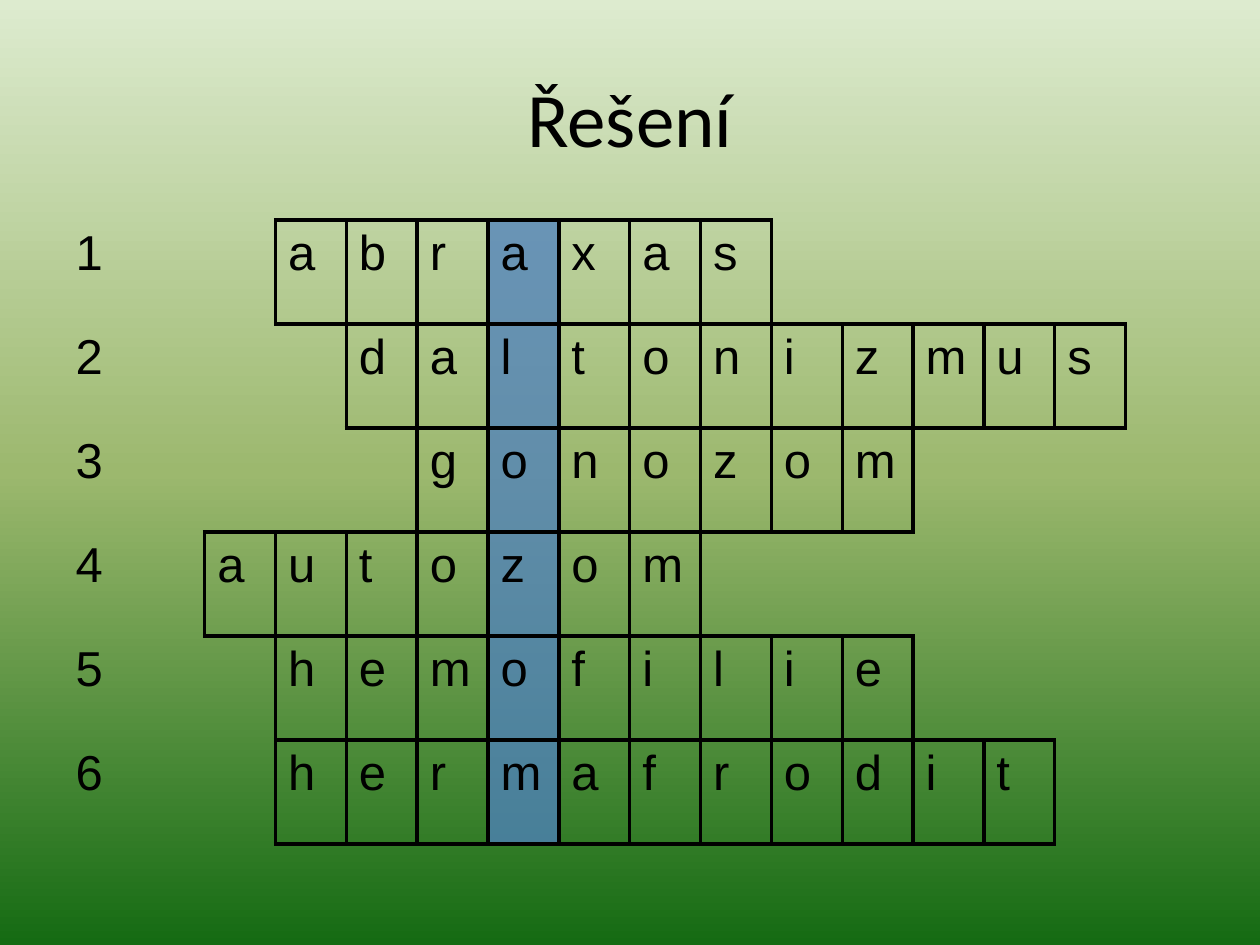
"""Builds the crossword solution slide."""
from lxml import etree
from pptx import Presentation, util as u
from pptx.dml.color import RGBColor
from pptx.enum import text
from pptx.oxml import parse_xml
from pptx.oxml.ns import nsdecls, qn

PX = 914400 / 126
COLORS = {"ink": "000000", "key": "4F81BD", "top": "DDEBCF", "middle": "9CB86E", "bottom": "156B13"}
COLUMNS, KEY_COLUMN = 16, 6
WORDS = [
    (3, "abraxas"),
    (4, "daltonizmus"),
    (5, "gonozom"),
    (2, "autozom"),
    (3, "hemofilie"),
    (3, "hermafrodit"),
]


def px(length):
    return u.Emu(round(length * PX))


def write(frame, words, size, font, align=text.PP_ALIGN.LEFT, anchor=text.MSO_ANCHOR.TOP):
    frame.vertical_anchor = anchor
    paragraph = frame.paragraphs[0]
    paragraph.alignment = align
    run = paragraph.add_run()
    run.text = words
    run.font.size = u.Pt(size)
    run.font.name = font
    run.font.color.rgb = RGBColor.from_string(COLORS["ink"])


deck = Presentation()
deck.slide_width, deck.slide_height = px(1260), px(945)
slide = deck.slides.add_slide(deck.slide_layouts[5])

stops = "".join(
    f'<a:gs pos="{place}"><a:srgbClr val="{COLORS[name]}"/></a:gs>'
    for place, name in ((0, "top"), (50000, "middle"), (100000, "bottom"))
)
slide.background.fill.solid()
solid = slide.background._cSld.find(".//" + qn("a:solidFill"))
solid.getparent().replace(solid, parse_xml(
    f'<a:gradFill {nsdecls("a")} rotWithShape="1"><a:gsLst>{stops}</a:gsLst>'
    '<a:lin ang="5400000" scaled="0"/></a:gradFill>'
))

heading = slide.shapes.title
heading.left, heading.top, heading.width, heading.height = px(63), px(38), px(1134), px(157)
write(heading.text_frame, "Řešení", 44, "Calibri", text.PP_ALIGN.CENTER, text.MSO_ANCHOR.MIDDLE)

crossword = slide.shapes.add_table(len(WORDS), COLUMNS, px(63), px(220), px(1134), px(624)).table
crossword.first_row = crossword.horz_banding = False

letters = {
    (row, start + offset): letter
    for row, (start, word) in enumerate(WORDS)
    for offset, letter in enumerate(word)
}
for row in range(len(WORDS)):
    for column in range(COLUMNS):
        square = crossword.cell(row, column)
        place = (row, column)
        label = str(row + 1) if column == 0 else letters.get(place)
        if label:
            write(square.text_frame, label, 28, "Arial")

        neighbours = {
            "L": (row, column - 1),
            "R": (row, column + 1),
            "T": (row - 1, column),
            "B": (row + 1, column),
        }
        properties = square._tc.get_or_add_tcPr()
        for side, neighbour in neighbours.items():
            edge = etree.SubElement(properties, qn(f"a:ln{side}"), w=str(u.Pt(2.25)))
            if place in letters or neighbour in letters:
                paint = etree.SubElement(edge, qn("a:solidFill"))
                etree.SubElement(paint, qn("a:srgbClr"), val=COLORS["ink"])
            else:
                etree.SubElement(edge, qn("a:noFill"))

        if column == KEY_COLUMN:
            square.fill.solid()
            square.fill.fore_color.rgb = RGBColor.from_string(COLORS["key"])
            tint = properties.find(qn("a:solidFill")).find(qn("a:srgbClr"))
            etree.SubElement(tint, qn("a:alpha"), val="76000")
        else:
            square.fill.background()

deck.save("out.pptx")
